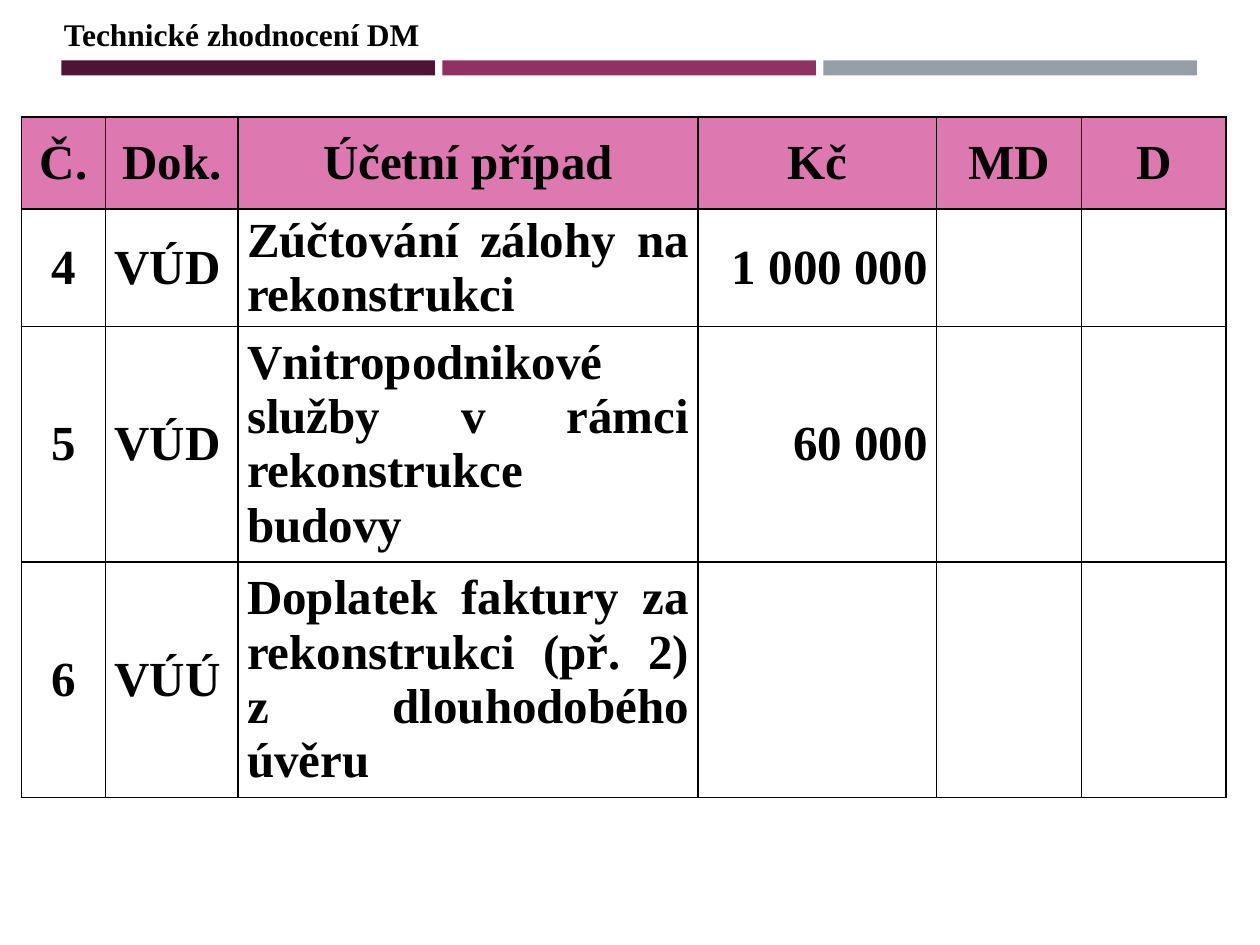
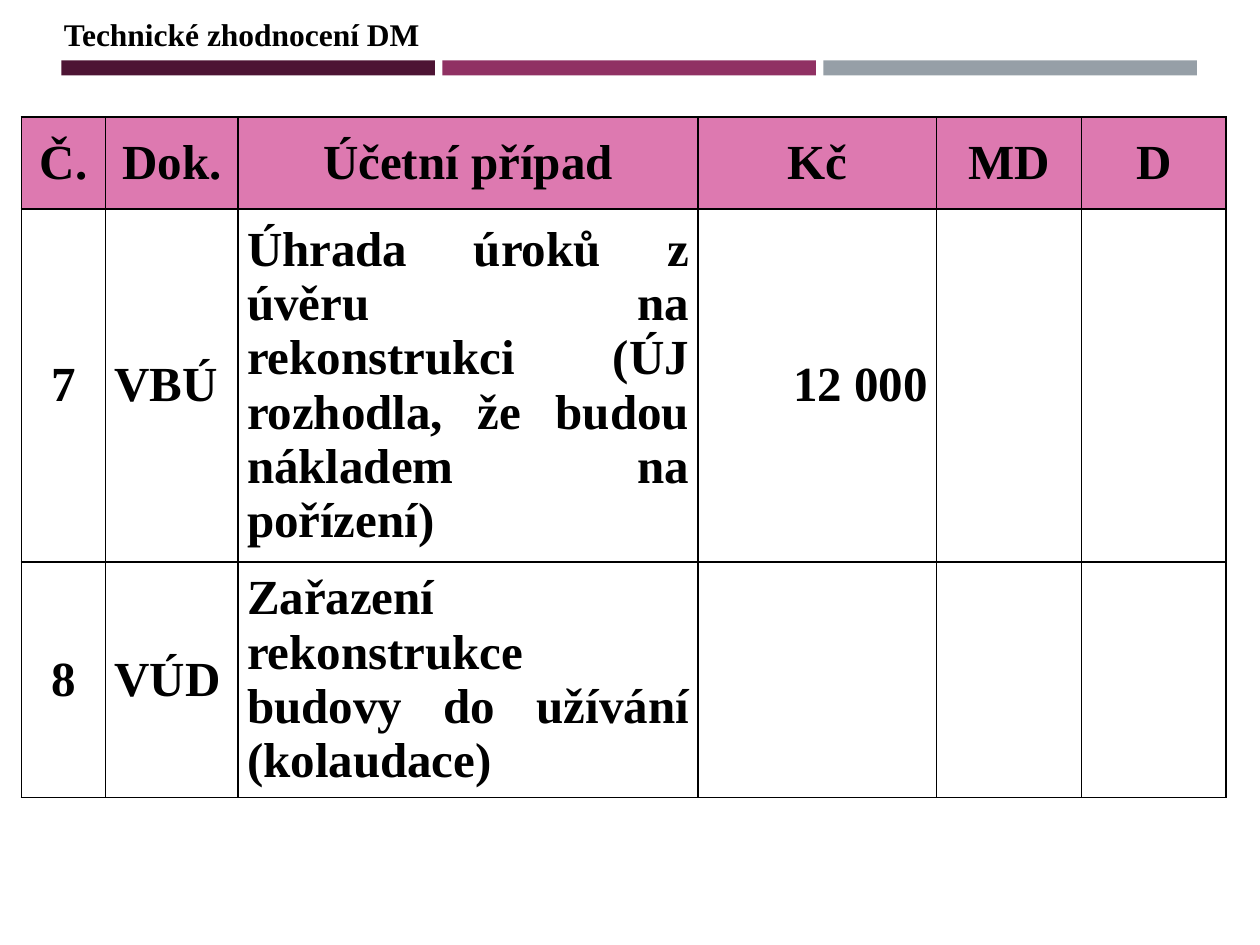
"""Build two slides of bookkeeping entries on the technical improvement of fixed assets."""
from dataclasses import dataclass

from lxml.etree import SubElement
from pptx import Presentation
from pptx.dml.color import RGBColor
from pptx.enum.shapes import MSO_SHAPE
from pptx.enum.text import MSO_ANCHOR, MSO_AUTO_SIZE, PP_ALIGN
from pptx.oxml.ns import qn
from pptx.presentation import Presentation as Deck
from pptx.slide import Slide
from pptx.table import _Cell as Cell
from pptx.text.text import _Paragraph as Paragraph
from pptx.util import Cm, Pt

FONT = "Times New Roman"
BLACK = "000000"
HEADER_PINK = "DD79B0"
BAND_COLORS = ("4D1434", "903163", "969FA7")
TITLE = "Technické zhodnocení DM"
HEADER_HEIGHT = 1.85
LINE_HEIGHT = 1.186


@dataclass(frozen=True)
class Column:
    """A table column: heading, width in cm and alignment of its entries."""
    heading: str
    width: float
    alignment: PP_ALIGN


@dataclass(frozen=True)
class Entry:
    """One accounting entry and the number of lines its description takes."""
    number: str
    document: str
    description: str
    amount: str
    lines: int

    def texts(self) -> tuple[str, ...]:
        """Return the cell texts, with both account columns left open."""
        return self.number, self.document, self.description, self.amount, "", ""


COLUMNS = (
    Column("Č.", 1.7, PP_ALIGN.CENTER),
    Column("Dok.", 2.67, PP_ALIGN.LEFT),
    Column("Účetní případ", 9.27, PP_ALIGN.JUSTIFY),
    Column("Kč", 4.81, PP_ALIGN.RIGHT),
    Column("MD", 2.92, PP_ALIGN.CENTER),
    Column("D", 2.92, PP_ALIGN.CENTER),
)

PAGES = (
    (
        Entry("4", "VÚD", "Zúčtování zálohy na rekonstrukci", "1 000 000", 2),
        Entry("5", "VÚD", "Vnitropodnikové služby v rámci rekonstrukce budovy", "60 000", 4),
        Entry("6", "VÚÚ", "Doplatek faktury za rekonstrukci (př. 2) z dlouhodobého úvěru", "", 4),
    ),
    (
        Entry("7", "VBÚ", "Úhrada úroků z úvěru na rekonstrukci "
              "(ÚJ rozhodla, že budou nákladem na pořízení)", "12 000", 6),
        Entry("8", "VÚD", "Zařazení rekonstrukce budovy do užívání (kolaudace)", "", 4),
    ),
)


def color(value: str) -> RGBColor:
    """Turn a hex string into a colour."""
    return RGBColor.from_string(value)


def style_paragraph(para: Paragraph, size: int, alignment: PP_ALIGN) -> None:
    """Set the shared bold black type on a paragraph."""
    para.alignment = alignment
    para.font.name = FONT
    para.font.size = Pt(size)
    para.font.bold = True
    para.font.color.rgb = color(BLACK)


def add_bands(page: Slide) -> None:
    """Draw the three coloured bands under the title."""
    for index, fill in enumerate(BAND_COLORS):
        band = page.shapes.add_shape(
            MSO_SHAPE.RECTANGLE, Cm(1.24 + 7.68 * index), Cm(1.22), Cm(7.53), Cm(0.3))
        band.shadow.inherit = False
        band.fill.solid()
        band.fill.fore_color.rgb = color(fill)
        band.line.fill.background()


def add_title(page: Slide) -> None:
    """Write the slide title above the bands."""
    box = page.shapes.add_textbox(Cm(1.04), Cm(0.18), Cm(7.75), Cm(1.02))
    box.text_frame.word_wrap = False
    box.text_frame.auto_size = MSO_AUTO_SIZE.SHAPE_TO_FIT_TEXT
    para = box.text_frame.paragraphs[0]
    para.text = TITLE
    style_paragraph(para, 18, PP_ALIGN.LEFT)


def add_borders(cell: Cell) -> None:
    """Give a cell a thin black line on every side."""
    properties = cell._tc.get_or_add_tcPr()
    for side in ("lnL", "lnR", "lnT", "lnB"):
        line = SubElement(properties, qn(f"a:{side}"), w=str(Pt(1)))
        fill = SubElement(line, qn("a:solidFill"))
        SubElement(fill, qn("a:srgbClr"), val=BLACK)


def fill_cell(cell: Cell, text: str, alignment: PP_ALIGN, is_header: bool) -> None:
    """Write and style one table cell."""
    cell.vertical_anchor = MSO_ANCHOR.MIDDLE
    cell.margin_left = cell.margin_right = Cm(0.18)
    cell.margin_top = cell.margin_bottom = 0
    add_borders(cell)
    if is_header:
        cell.fill.solid()
        cell.fill.fore_color.rgb = color(HEADER_PINK)
    else:
        cell.fill.background()
    para = cell.text_frame.paragraphs[0]
    if text:
        para.text = text
    style_paragraph(para, 28, alignment)


def add_entries(page: Slide, entries: tuple[Entry, ...]) -> None:
    """Draw the table of accounting entries."""
    heights = [HEADER_HEIGHT] + [LINE_HEIGHT * entry.lines for entry in entries]
    width = sum(column.width for column in COLUMNS)
    table = page.shapes.add_table(
        len(heights), len(COLUMNS), Cm(0.43), Cm(2.36), Cm(width), Cm(sum(heights))).table
    table.horz_banding = False
    for row, height in zip(table.rows, heights):
        row.height = Cm(height)
    for index, column in enumerate(COLUMNS):
        table.columns[index].width = Cm(column.width)
        fill_cell(table.cell(0, index), column.heading, PP_ALIGN.CENTER, True)
        for number, entry in enumerate(entries, start=1):
            fill_cell(table.cell(number, index), entry.texts()[index], column.alignment, False)


def build_deck() -> Deck:
    """Build the deck with one table on each page."""
    deck = Presentation()
    deck.slide_width, deck.slide_height = Cm(25.4), Cm(19.05)
    for entries in PAGES:
        page = deck.slides.add_slide(deck.slide_layouts[6])
        add_bands(page)
        add_title(page)
        add_entries(page, entries)
    return deck


def main() -> None:
    """Build and save the deck."""
    build_deck().save("out.pptx")


if __name__ == "__main__":
    main()
